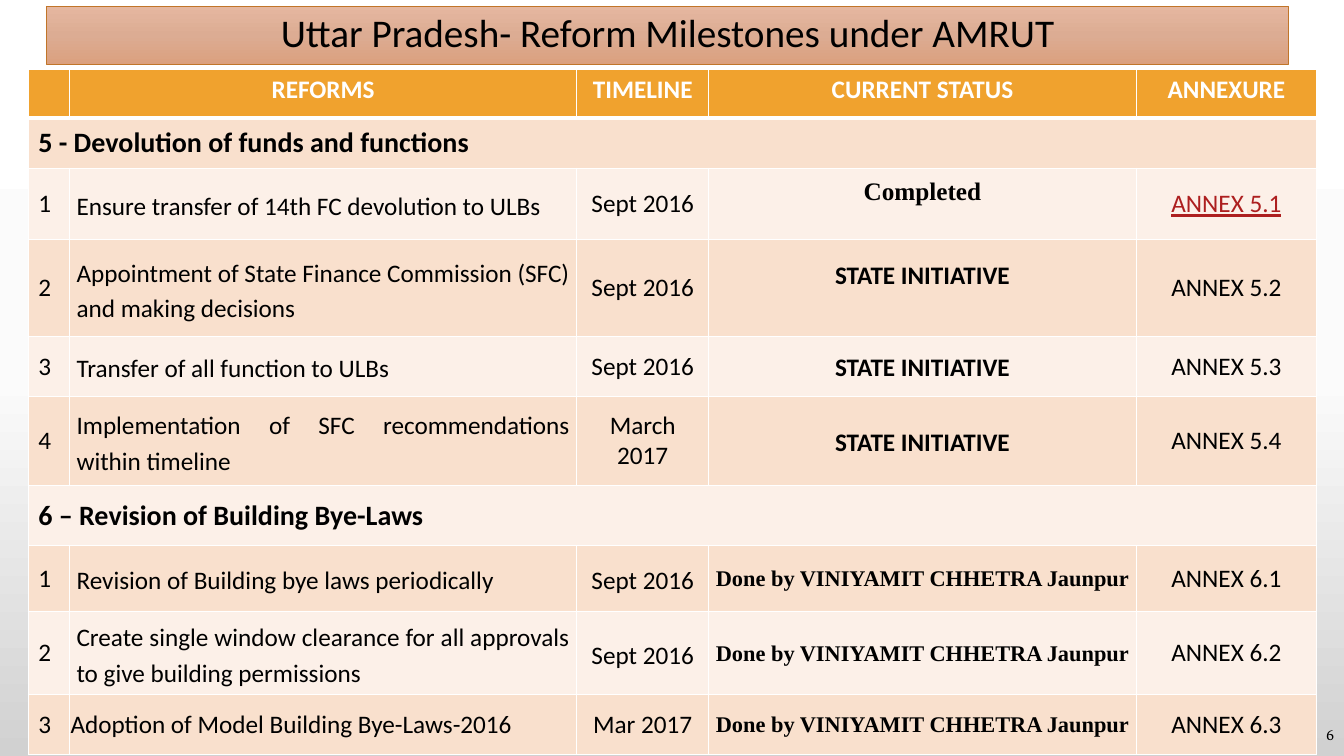
import copy
import dataclasses
import typing

import lxml.etree
import pptx
import pptx.dml.color
import pptx.dml.fill
import pptx.enum.text
import pptx.oxml.ns
import pptx.table
import pptx.text.text
import pptx.util

Inches = pptx.util.Inches
Pt = pptx.util.Pt
ALIGN = pptx.enum.text.PP_ALIGN
ANCHOR = pptx.enum.text.MSO_ANCHOR
qn = pptx.oxml.ns.qn

COLORS = {
    "text": "000000", "white": "FFFFFF", "link": "AD1F1F",
    "header": "F0A22E", "dark_band": "F9E0CD", "light_band": "FCF0E8",
    "title_line": "C17529",
}
PAGE_GRADIENT = ("FFFFFF", "FBFBFB", "D1D1D1")
TITLE_GRADIENT = ("E5B7A0", "DCAC93", "DBA07E")
SERIF = "Times New Roman"
COLUMN_WIDTHS = (0.41, 5.03, 1.31, 4.24, 1.79)
HEADINGS = ("", "REFORMS", "TIMELINE", "CURRENT STATUS", "ANNEXURE")
BYE_LAW_STATUS = "Done by VINIYAMIT CHHETRA Jaunpur"


@dataclasses.dataclass(frozen=True)
class TextStyle:
    size: float = 18
    font: str = "Calibri"
    color: str = "text"
    bold: bool = False
    underline: bool = False
    align: ALIGN = ALIGN.CENTER
    spacing: float = 1.0


@dataclasses.dataclass(frozen=True)
class Insets:
    side: float = 0.1
    top: float = 0.05
    bottom: float = 0.05


@dataclasses.dataclass(frozen=True)
class Section:
    name: str
    height: float


@dataclasses.dataclass(frozen=True)
class Milestone:
    number: int
    reform: str
    timeline: str
    status: str
    annex: str
    height: float
    reform_style: TextStyle = TextStyle(align=ALIGN.JUSTIFY, spacing=1.15)
    timeline_style: TextStyle = TextStyle()
    status_style: TextStyle = TextStyle(bold=True, spacing=1.07)
    annex_style: TextStyle = TextStyle()
    reform_insets: Insets = Insets(0.07, 0.01, 0)
    status_insets: Insets = Insets(0.07, 0.01, 0)


SPACED = TextStyle(spacing=1.15)
LEFT = TextStyle(align=ALIGN.LEFT)
HEADER = TextStyle(color="white", bold=True)
SECTION = TextStyle(size=20, bold=True, align=ALIGN.LEFT)
DONE = TextStyle(size=16, font=SERIF, bold=True)
RAISED = Insets(0.07, 0.01, 0.3)

ROWS: tuple[Section | Milestone, ...] = (
    Section("5 - Devolution of funds and functions", 0.5),
    Milestone(1, "Ensure transfer of 14th FC devolution to ULBs", "Sept 2016",
              "Completed", "ANNEX 5.1", 0.71,
              status_style=TextStyle(font=SERIF, bold=True, spacing=1.15),
              annex_style=TextStyle(color="link", underline=True),
              status_insets=RAISED),
    Milestone(2, "Appointment of State Finance Commission (SFC) and making decisions",
              "Sept 2016", "STATE INITIATIVE", "ANNEX 5.2", 0.96,
              reform_style=TextStyle(align=ALIGN.LEFT, spacing=1.15),
              status_style=TextStyle(bold=True, spacing=1.15),
              status_insets=RAISED),
    Milestone(3, "Transfer of all function to ULBs", "Sept 2016",
              "STATE INITIATIVE", "ANNEX 5.3", 0.59),
    Milestone(4, "Implementation of SFC recommendations within timeline", "March 2017",
              "STATE INITIATIVE", "ANNEX 5.4", 0.89),
    Section("6 – Revision of Building Bye-Laws", 0.59),
    Milestone(1, "Revision of Building bye laws periodically", "Sept 2016",
              BYE_LAW_STATUS, "ANNEX 6.1", 0.66,
              timeline_style=SPACED, status_style=DONE),
    Milestone(2, "Create single window clearance for all approvals to give building permissions",
              "Sept 2016", BYE_LAW_STATUS, "ANNEX 6.2", 0.82,
              timeline_style=SPACED, status_style=DONE),
    Milestone(3, "Adoption of Model Building Bye-Laws-2016", "Mar 2017",
              BYE_LAW_STATUS, "ANNEX 6.3", 0.6, reform_style=LEFT,
              status_style=DONE, reform_insets=Insets(0.01, 0.01, 0)),
)
HEADER_HEIGHT = 0.48


def rgb(value: str) -> pptx.dml.color.RGBColor:
    return pptx.dml.color.RGBColor.from_string(value)


def write(tf: pptx.text.text.TextFrame, text: str, style: TextStyle) -> None:
    tf.text = text
    p = tf.paragraphs[0]
    p.alignment = style.align
    p.line_spacing = style.spacing
    for r in p.runs:
        r.font.size = Pt(style.size)
        r.font.name = style.font
        r.font.bold = style.bold
        r.font.underline = style.underline
        r.font.color.rgb = rgb(COLORS[style.color])


def fill_gradient(fill: pptx.dml.fill.FillFormat, owner: lxml.etree.ElementBase,
                  colors: typing.Sequence[str]) -> None:
    """Fill the owner element from top to bottom with three even stops."""
    fill.gradient()
    fill.gradient_angle = 270
    stops = next(owner.iter(qn("a:gsLst")))
    stops.append(copy.deepcopy(stops[-1]))
    for i, (stop, color) in enumerate(zip(fill.gradient_stops, colors)):
        stop.position = i / 2
        stop.color.rgb = rgb(color)


def format_cell(cell: pptx.table._Cell, fill: str, bottom_line: float = 1) -> None:
    tc_pr = cell._tc.get_or_add_tcPr()
    for side, width in (("L", 1), ("R", 1), ("T", 1), ("B", bottom_line)):
        ln = lxml.etree.SubElement(tc_pr, qn(f"a:ln{side}"), w=str(Pt(width)))
        solid = lxml.etree.SubElement(ln, qn("a:solidFill"))
        lxml.etree.SubElement(solid, qn("a:srgbClr"), val=COLORS["white"])
    cell.fill.solid()
    cell.fill.fore_color.rgb = rgb(COLORS[fill])


def write_cell(cell: pptx.table._Cell, text: str, style: TextStyle,
               insets: Insets = Insets(), anchor: ANCHOR = ANCHOR.MIDDLE) -> None:
    cell.vertical_anchor = anchor
    cell.margin_left = cell.margin_right = Inches(insets.side)
    cell.margin_top, cell.margin_bottom = Inches(insets.top), Inches(insets.bottom)
    write(cell.text_frame, text, style)


def fill_table(table: pptx.table.Table) -> None:
    table.horz_banding = False
    for column, width in zip(table.columns, COLUMN_WIDTHS):
        column.width = Inches(width)
    table.rows[0].height = Inches(HEADER_HEIGHT)
    for cell, heading in zip(table.rows[0].cells, HEADINGS):
        format_cell(cell, "header", bottom_line=3)
        write_cell(cell, heading, HEADER, anchor=ANCHOR.TOP)
    for i, item in enumerate(ROWS, start=1):
        row = table.rows[i]
        row.height = Inches(item.height)
        cells = list(row.cells)
        for cell in cells:
            format_cell(cell, "dark_band" if i % 2 else "light_band")
        if isinstance(item, Section):
            cells[0].merge(cells[-1])
            write_cell(cells[0], item.name, SECTION)
            continue
        write_cell(cells[0], str(item.number), LEFT)
        write_cell(cells[1], item.reform, item.reform_style, item.reform_insets)
        write_cell(cells[2], item.timeline, item.timeline_style)
        write_cell(cells[3], item.status, item.status_style, item.status_insets)
        write_cell(cells[4], item.annex, item.annex_style)


def main() -> None:
    prs = pptx.Presentation()
    prs.slide_width, prs.slide_height = Inches(13.33), Inches(7.5)
    s = prs.slides.add_slide(prs.slide_layouts[5])
    fill_gradient(s.background.fill, s.element, PAGE_GRADIENT)

    title = s.shapes.title
    title.left, title.top = Inches(0.46), Inches(0.06)
    title.width, title.height = Inches(12.32), Inches(0.58)
    fill_gradient(title.fill, title.element, TITLE_GRADIENT)
    title.line.color.rgb = rgb(COLORS["title_line"])
    title.line.width = Pt(0.5)
    title.text_frame.auto_size = pptx.enum.text.MSO_AUTO_SIZE.NONE
    title.text_frame.vertical_anchor = ANCHOR.MIDDLE
    write(title.text_frame, "Uttar Pradesh- Reform Milestones under AMRUT",
          TextStyle(size=28, spacing=0.9))

    page = s.shapes.add_textbox(Inches(12.48), Inches(7.09), Inches(0.85), Inches(0.4))
    page.text_frame.word_wrap = True
    page.text_frame.vertical_anchor = ANCHOR.MIDDLE
    write(page.text_frame, "6", TextStyle(size=11, font="Vollkorn", align=ALIGN.RIGHT))

    height = HEADER_HEIGHT + sum(item.height for item in ROWS)
    frame = s.shapes.add_table(len(ROWS) + 1, len(HEADINGS), Inches(0.28), Inches(0.69),
                               Inches(sum(COLUMN_WIDTHS)), Inches(height))
    fill_table(frame.table)
    prs.save("out.pptx")


if __name__ == "__main__":
    main()
